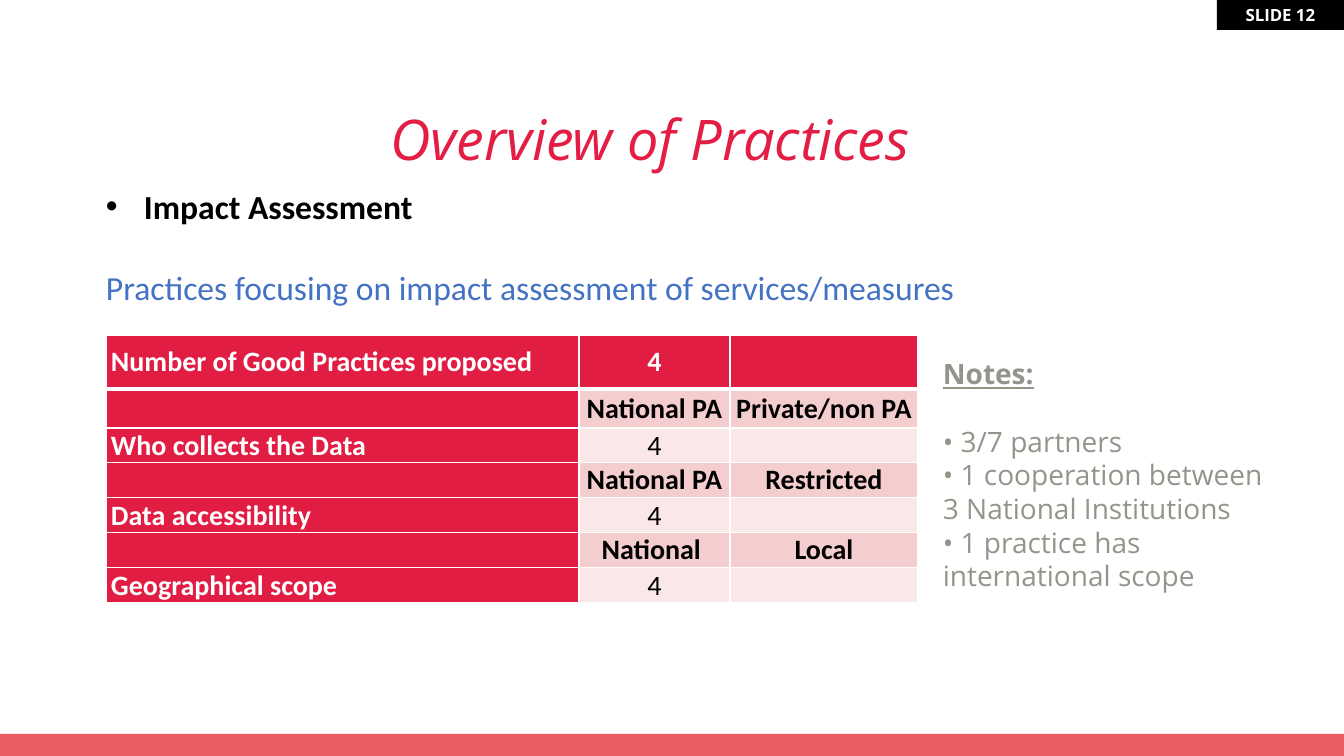
from pptx import Presentation
from pptx.dml.color import RGBColor
from pptx.enum.shapes import MSO_SHAPE
from pptx.enum.text import MSO_ANCHOR, PP_ALIGN
from pptx.oxml import parse_xml
from pptx.oxml.ns import nsdecls
from pptx.util import Emu, Pt

WHITE, BLACK, CRIMSON, CORAL = "FFFFFF", "000000", "E21D44", "EB5C62"
PINK, PALE, BLUE, GREY = "F4CDCF", "FAE8E9", "4472C4", "95948B"
HEAD, BODY = "Open Sans", "Calibri"


def px(n):
    """Pixels to EMU, at 100.8 pixels to the inch."""
    return Emu(round(n * 914400 / 100.8))


def rgb(color):
    return RGBColor.from_string(color)


class SlideBuilder:
    def __init__(self, prs):
        self.slide = prs.slides.add_slide(prs.slide_layouts[6])

    def style(self, p, size, color, font=BODY, bold=False, italic=False,
              underline=False, align=PP_ALIGN.LEFT):
        p.alignment = align
        for r in p.runs:
            f = r.font
            f.name, f.size, f.color.rgb = font, Pt(size), rgb(color)
            f.bold, f.italic, f.underline = bold, italic, underline

    def bar(self, x, y, w, h, color):
        sp = self.slide.shapes.add_shape(MSO_SHAPE.RECTANGLE, px(x), px(y), px(w), px(h))
        sp.shadow.inherit = False
        sp.fill.solid()
        sp.fill.fore_color.rgb = rgb(color)
        sp.line.fill.background()
        return sp

    def text(self, x, y, w, h, lines, **common):
        """Add a text box; each line is (text, style options)."""
        tf = self.slide.shapes.add_textbox(px(x), px(y), px(w), px(h)).text_frame
        tf.word_wrap = True
        tf.text = "\n".join(line for line, _ in lines)
        for p, (_, options) in zip(tf.paragraphs, lines):
            self.style(p, **{**common, **options})
        return tf

    def bullet(self, p, indent):
        pPr = p._p.get_or_add_pPr()
        pPr.set("marL", str(px(indent)))
        pPr.set("indent", str(-px(indent)))
        pPr.append(parse_xml(f'<a:buFont {nsdecls("a")} typeface="Arial"/>'))
        pPr.append(parse_xml(f'<a:buChar {nsdecls("a")} char="•"/>'))

    def cell(self, cell, text, fill, color, bold, align, anchor, rules):
        """Fill one cell; rules maps each border tag to its width in points."""
        cell.margin_left = cell.margin_right = px(5)
        cell.margin_top = cell.margin_bottom = 0
        cell.vertical_anchor = anchor
        cell.text_frame.text = text
        self.style(cell.text_frame.paragraphs[0], 20, color, bold=bold, align=align)
        tcPr = cell._tc.get_or_add_tcPr()
        for tag, width in rules.items():
            tcPr.append(parse_xml(
                f'<a:{tag} {nsdecls("a")} w="{Pt(width)}"><a:solidFill>'
                f'<a:srgbClr val="{WHITE}"/></a:solidFill></a:{tag}>'))
        cell.fill.solid()
        cell.fill.fore_color.rgb = rgb(fill)

    def table(self, x, y, widths, heights, rows):
        """Add a table with a header row, then pairs of label and value rows."""
        table = self.slide.shapes.add_table(
            len(rows), len(widths), px(x), px(y),
            px(sum(widths)), px(sum(heights))).table
        for column, width in zip(table.columns, widths):
            column.width = px(width)
        for i, (height, row) in enumerate(zip(heights, rows)):
            table.rows[i].height = px(height)
            values = i > 0 and i % 2 == 0
            rules = {"lnL": 1, "lnR": 1, "lnT": 3 if i == 1 else 1,
                     "lnB": 3 if i == 0 else 1}
            for j, text in enumerate(row):
                strong = i == 0 or j == 0
                fill = CRIMSON if strong else PALE if values else PINK
                self.cell(table.cell(i, j), text, fill,
                          WHITE if strong else BLACK, strong or not values,
                          PP_ALIGN.CENTER if j else PP_ALIGN.LEFT,
                          MSO_ANCHOR.BOTTOM if values else MSO_ANCHOR.MIDDLE, rules)


def main():
    prs = Presentation()
    prs.slide_width, prs.slide_height = px(1344), px(756)
    s = SlideBuilder(prs)

    s.bar(0, 734, 1344, 22, CORAL)
    badge = s.bar(1217, 0, 127, 30, BLACK)
    tf = badge.text_frame
    tf.text = "SLIDE 12"
    tf.vertical_anchor = MSO_ANCHOR.MIDDLE
    tf.margin_top = tf.margin_bottom = 0
    s.style(tf.paragraphs[0], 12, WHITE, HEAD, bold=True, align=PP_ALIGN.CENTER)

    title = s.text(96, 86, 1108, 86, [("Overview of Practices", {})], size=40,
                   color="E31D44", font=HEAD, italic=True, align=PP_ALIGN.CENTER)
    title.margin_top = px(18)

    intro = s.text(96, 181, 1042, 152, [
        ("Impact Assessment", {"color": BLACK, "bold": True}),
        ("Practices focusing on impact assessment of services/measures", {}),
    ], size=24, color=BLUE)
    s.bullet(intro.paragraphs[0], 38)
    intro.paragraphs[1].space_before = Pt(29)

    notes = s.text(933, 352, 362, 288, [
        ("Notes:", {"bold": True, "underline": True}),
        ("• 3/7 partners", {}),
        ("• 1 cooperation between 3 National Institutions", {}),
        ("• 1 practice has international scope", {}),
    ], size=20, color=GREY, font=HEAD)
    notes.paragraphs[1].space_before = Pt(24)

    s.table(106, 335, [473, 151, 188], [54, 39] + [35] * 5, [
        ["Number of Good Practices proposed", "4", ""],
        ["", "National PA", "Private/non PA"],
        ["Who collects the Data", "4", ""],
        ["", "National PA", "Restricted"],
        ["Data accessibility", "4", ""],
        ["", "National ", "Local"],
        ["Geographical scope", "4", ""],
    ])
    prs.save("out.pptx")


if __name__ == "__main__":
    main()
